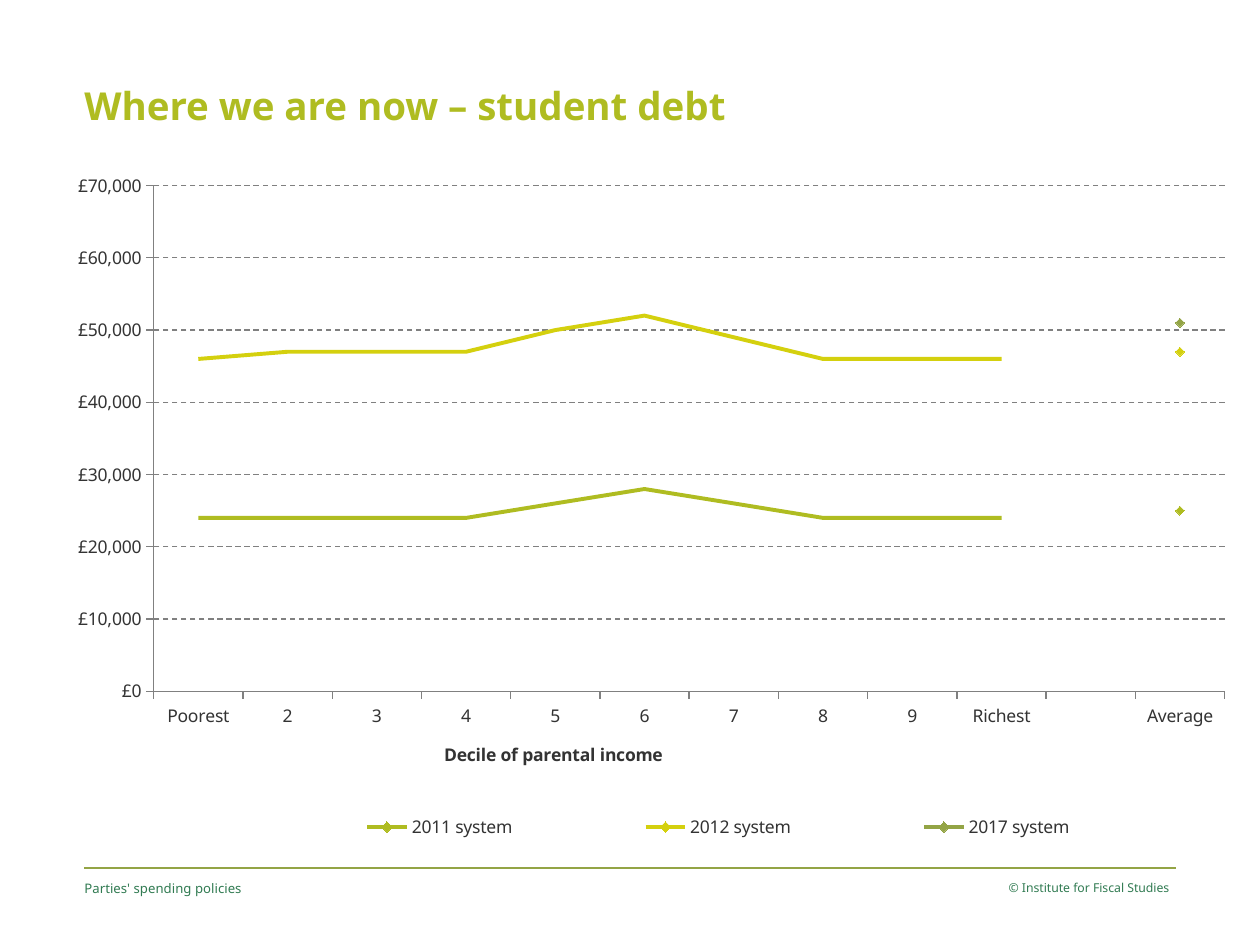
from dataclasses import dataclass

from lxml import etree
from pptx import Presentation
from pptx.chart.data import CategoryChartData
from pptx.dml.color import RGBColor
from pptx.enum.chart import XL_CHART_TYPE, XL_LEGEND_POSITION, XL_MARKER_STYLE, XL_TICK_MARK
from pptx.enum.dml import MSO_LINE
from pptx.enum.shapes import MSO_CONNECTOR
from pptx.enum.text import MSO_ANCHOR, PP_ALIGN
from pptx.oxml.ns import qn
from pptx.util import Inches, Pt

LINE_CHART = XL_CHART_TYPE.LINE_MARKERS
BOTTOM = XL_LEGEND_POSITION.BOTTOM
DIAMOND = XL_MARKER_STYLE.DIAMOND
NO_MARKER = XL_MARKER_STYLE.NONE
OUTSIDE = XL_TICK_MARK.OUTSIDE
DASH = MSO_LINE.DASH
STRAIGHT = MSO_CONNECTOR.STRAIGHT
TOP = MSO_ANCHOR.TOP
LEFT, RIGHT = PP_ALIGN.LEFT, PP_ALIGN.RIGHT


@dataclass(frozen=True)
class Theme:
    font: str = "Noto Sans"
    lime: str = "AFBC21"
    yellow: str = "D4D00E"
    olive: str = "93A445"
    green: str = "317B52"
    text: str = "333333"
    grid: str = "808080"
    title_size: float = 22
    chart_size: float = 10
    footer_size: float = 7.5
    credit_size: float = 7
    thin: float = 0.75
    thick: float = 2.25


@dataclass(frozen=True)
class Series:
    name: str
    values: tuple
    color: str
    average: bool = False


THEME = Theme()
CATEGORIES = ("Poorest", *map(str, range(2, 10)), "Richest", "", "Average")
BLANKS = (None,) * (len(CATEGORIES) - 1)
SERIES = (
    Series("Series 1", (24000, 24000, 24000, 24000, 26000, 28000,
                        26000, 24000, 24000, 24000, None, None), THEME.lime),
    Series("Series 2", (46000, 47000, 47000, 47000, 50000, 52000,
                        49000, 46000, 46000, 46000, None, None), THEME.yellow),
    Series("2011 system", (*BLANKS, 25000), THEME.lime, True),
    Series("2012 system", (*BLANKS, 47000), THEME.yellow, True),
    Series("2017 system", (*BLANKS, 51000), THEME.olive, True),
)


def rgb(color: str) -> RGBColor:
    return RGBColor.from_string(color)


def style_font(font, size: float, color: str, bold: bool = False) -> None:
    font.name, font.size, font.bold = THEME.font, Pt(size), bold
    font.color.rgb = rgb(color)


def style_line(line, color: str, width: float) -> None:
    line.color.rgb = rgb(color)
    line.width = Pt(width)


def write(tf, text: str, *, size: float, color: str, bold: bool = False,
          align=LEFT, right: float = 0) -> None:
    tf.word_wrap = True
    tf.vertical_anchor = TOP
    tf.margin_left = tf.margin_top = tf.margin_bottom = 0
    tf.margin_right = Inches(right)
    p = tf.paragraphs[0]
    p.alignment = align
    r = p.add_run()
    r.text = text
    style_font(r.font, size, color, bold)


def place(sp, left: float, top: float, width: float, height: float) -> None:
    sp.left, sp.top = Inches(left), Inches(top)
    sp.width, sp.height = Inches(width), Inches(height)


def add_footer(s, text: str, left: float, width: float, **fmt) -> None:
    sp = s.shapes.add_textbox(Inches(left), Inches(6.99), Inches(width), Inches(0.4))
    write(sp.text_frame, text, color=THEME.green, **fmt)


def add_rule(s) -> None:
    sp = s.shapes.add_connector(STRAIGHT, Inches(0.67), Inches(6.89), Inches(9.33), Inches(6.89))
    style_line(sp.line, THEME.olive, THEME.thin)
    etree.SubElement(sp._element.spPr, qn("a:effectLst"))


def set_layout(parent, index: int, inner: bool = False, **sizes: float) -> None:
    for old in parent.findall(qn("c:layout")):
        parent.remove(old)
    layout = etree.Element(qn("c:layout"))
    manual = etree.SubElement(layout, qn("c:manualLayout"))
    if inner:
        etree.SubElement(manual, qn("c:layoutTarget"), val="inner")
    for mode in ("xMode", "yMode"):
        etree.SubElement(manual, qn(f"c:{mode}"), val="edge")
    for key, value in sizes.items():
        etree.SubElement(manual, qn(f"c:{key}"), val=str(value))
    parent.insert(index, layout)


def format_axes(chart) -> None:
    for axis in (chart.category_axis, chart.value_axis):
        axis.major_tick_mark = OUTSIDE
        style_line(axis.format.line, THEME.grid, THEME.thin)
        style_font(axis.tick_labels.font, THEME.chart_size, THEME.text)
    value = chart.value_axis
    value.minimum_scale, value.maximum_scale, value.major_unit = 0, 70000, 10000
    value.tick_labels.number_format = '"£"#,##0'
    value.tick_labels.number_format_is_linked = False
    style_line(value.major_gridlines.format.line, THEME.grid, THEME.thin)
    value.major_gridlines.format.line.dash_style = DASH
    title = chart.category_axis.axis_title
    r = title.text_frame.paragraphs[0].add_run()
    r.text = "Decile of parental income"
    style_font(r.font, THEME.chart_size, THEME.text, True)
    set_layout(title._element, 1, x=0.35, y=0.83)


def format_legend(chart) -> None:
    chart.has_legend = True
    legend = chart.legend
    legend.position = BOTTOM
    legend.include_in_layout = False
    style_font(legend.font, THEME.chart_size, THEME.text)
    hidden = [i for i, series in enumerate(SERIES) if not series.average]
    for i in hidden:
        entry = etree.Element(qn("c:legendEntry"))
        etree.SubElement(entry, qn("c:idx"), val=str(i))
        etree.SubElement(entry, qn("c:delete"), val="1")
        legend._element.insert(i + 1, entry)
    set_layout(legend._element, len(hidden) + 1, x=0.19, y=0.92, w=0.76, h=0.07)


def add_debt_chart(s) -> None:
    data = CategoryChartData()
    data.categories = CATEGORIES
    for series in SERIES:
        data.add_series(series.name, series.values)
    chart = s.shapes.add_chart(LINE_CHART, Inches(0), Inches(1.15),
                               Inches(10), Inches(5.67), data).chart
    chart.has_title = False
    style_font(chart.font, THEME.chart_size, THEME.text)
    chart.plots[0].vary_by_categories = False
    for series, drawn in zip(SERIES, chart.plots[0].series):
        drawn.smooth = False
        style_line(drawn.format.line, series.color, THEME.thick)
        drawn.marker.style = DIAMOND if series.average else NO_MARKER
        if series.average:
            drawn.marker.size = 5
            drawn.marker.format.fill.solid()
            drawn.marker.format.fill.fore_color.rgb = rgb(series.color)
            style_line(drawn.marker.format.line, series.color, THEME.thin)
    format_axes(chart)
    format_legend(chart)
    set_layout(chart._chartSpace.chart.plotArea, 0, inner=True, x=0.122, y=0.057, w=0.85, h=0.708)


def main() -> None:
    prs = Presentation()
    prs.slide_width, prs.slide_height = Inches(10), Inches(7.5)
    s = prs.slides.add_slide(prs.slide_layouts[5])
    add_rule(s)
    place(s.shapes.title, 0.67, 0.65, 7.17, 0.44)
    write(s.shapes.title.text_frame, "Where we are now – student debt",
          size=THEME.title_size, color=THEME.lime, bold=True)
    add_footer(s, "© Institute for Fiscal Studies", 7.6, 1.73,
               size=THEME.credit_size, align=RIGHT, right=0.05)
    add_footer(s, "Parties' spending policies", 0.67, 3.17, size=THEME.footer_size)
    add_debt_chart(s)
    prs.save("out.pptx")


if __name__ == "__main__":
    main()
